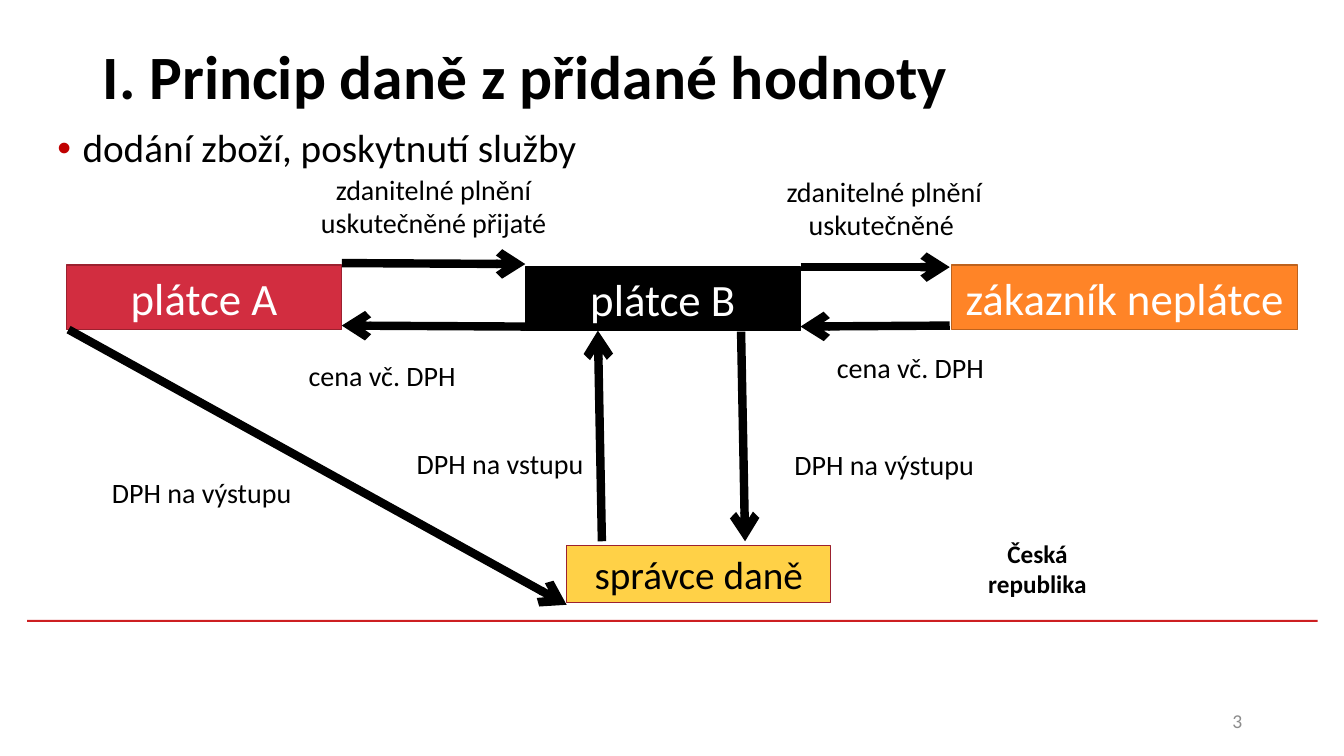
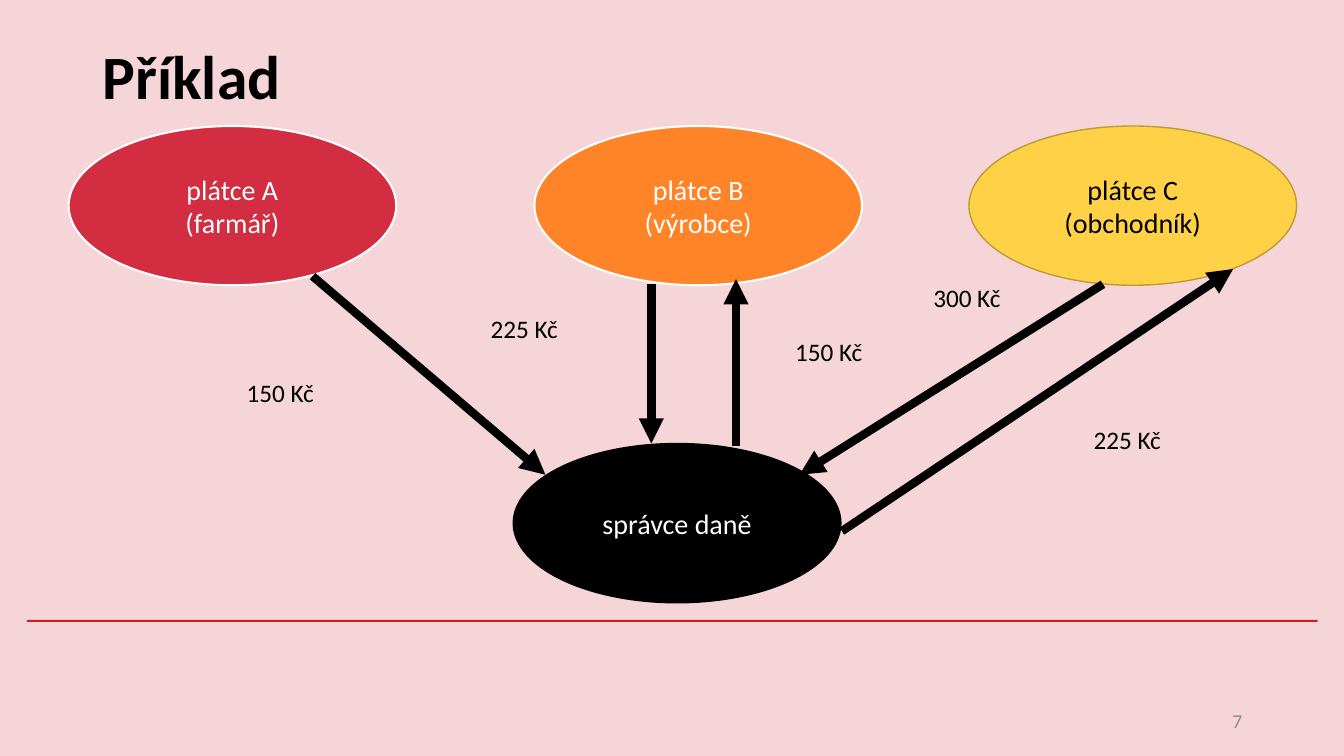
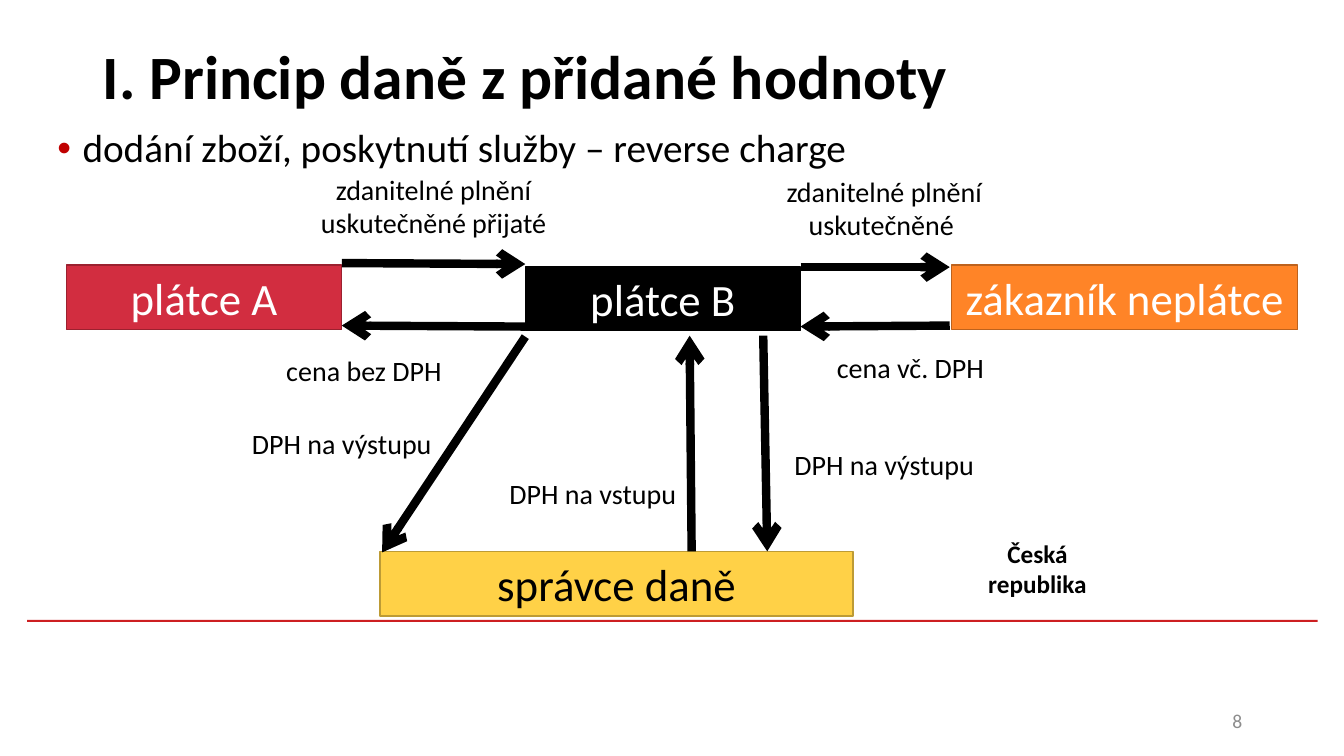
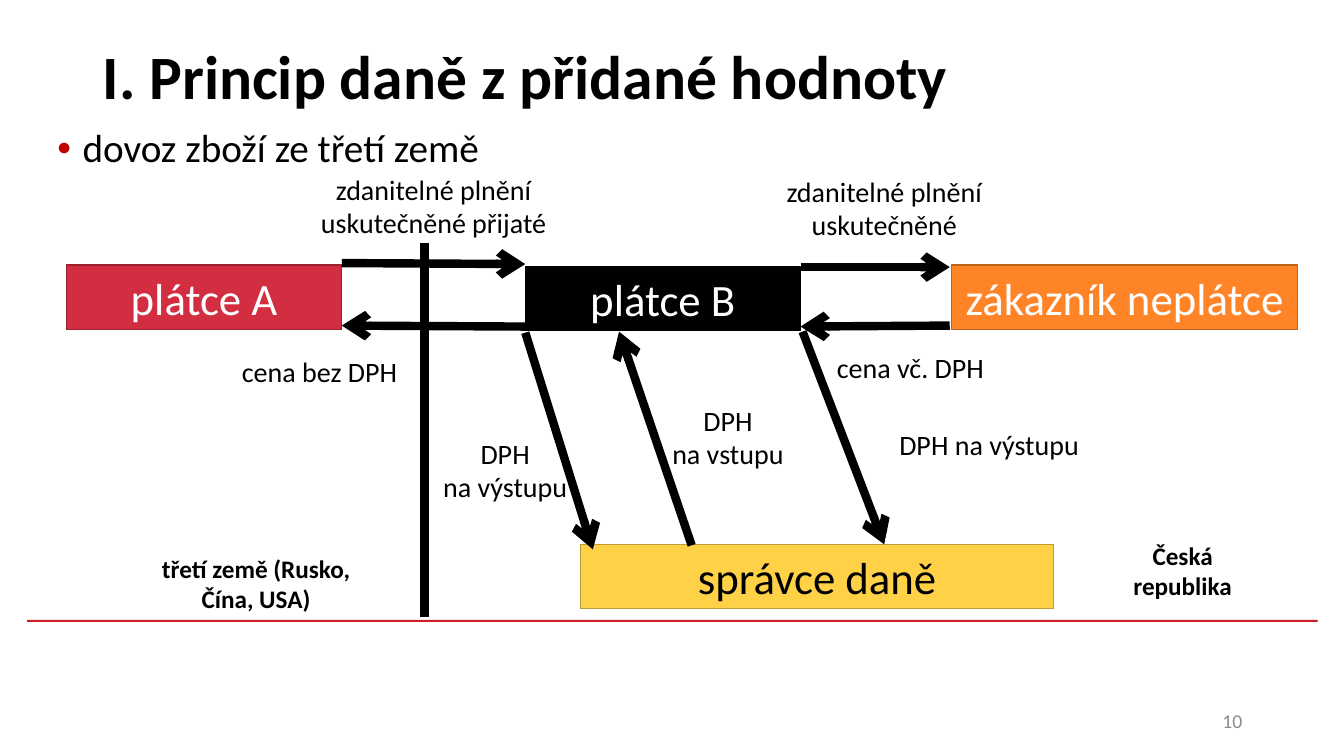
import pptx
import pptx.util
import pptx.dml.color
import pptx.enum.shapes
import pptx.enum.text
import pptx.oxml
import pptx.oxml.ns

Inches, Pt = pptx.util.Inches, pptx.util.Pt
SHAPE = pptx.enum.shapes.MSO_SHAPE
ALIGN = pptx.enum.text.PP_ALIGN
ANCHOR = pptx.enum.text.MSO_ANCHOR

BLACK, WHITE, PINK, GREY = "000000", "FFFFFF", "F6D5D9", "8C8C8C"
RED, ORANGE, YELLOW = "D22D40", "FF8427", "FFD147"
DARK_RED, DARK_ORANGE, DARK_YELLOW = "9B212F", "BD621D", "BD9B35"
RULE_RED, BULLET_RED = "CD1F21", "C00000"


def rgb(value):
    return pptx.dml.color.RGBColor.from_string(value)


def add_xml(parent, tag, **attrs):
    child = pptx.oxml.parse_xml(f"<a:{tag} {pptx.oxml.ns.nsdecls('a')}/>")
    for name, value in attrs.items():
        child.set(name, value)
    parent.append(child)
    return child


class Deck:
    """Shared style and the slide being built."""

    font = "Calibri"

    def __init__(self):
        self.prs = pptx.Presentation()
        self.prs.slide_width, self.prs.slide_height = Inches(13.33), Inches(7.5)
        self.s = None

    def slide(self, title, number, background=WHITE):
        self.s = self.prs.slides.add_slide(self.prs.slide_layouts[6])
        self.s.background.fill.solid()
        self.s.background.fill.fore_color.rgb = rgb(background)
        self.shape(SHAPE.RECTANGLE, (0.27, 6.15, 12.8, 0.02), RULE_RED)
        self.text((0.92, 0.02, 11.5, 1.45), title, 44, bold=True,
                  align=ALIGN.LEFT, anchor=ANCHOR.MIDDLE)
        self.text((9.42, 6.95, 3, 0.4), str(number), 14, GREY,
                  align=ALIGN.RIGHT, anchor=ANCHOR.MIDDLE)

    def set_text(self, sp, text, size, color=BLACK, bold=False,
                 align=ALIGN.CENTER, anchor=ANCHOR.TOP):
        tf = sp.text_frame
        tf.word_wrap, tf.vertical_anchor = True, anchor
        p = tf.paragraphs[0]
        p.text, p.alignment = text, align
        style = {"name": self.font, "size": Pt(size), "bold": bold}
        for r in p.runs:
            for name, value in style.items():
                setattr(r.font, name, value)
            r.font.color.rgb = rgb(color)
        return p

    def text(self, box, text, size=20, color=BLACK, **style):
        sp = self.s.shapes.add_textbox(*map(Inches, box))
        return self.set_text(sp, text, size, color, **style)

    def bullet(self, text):
        p = self.text((0.47, 1.23, 12.39, 0.71), text, 28, align=ALIGN.LEFT)
        pPr = p._p.get_or_add_pPr()
        pPr.set("marL", str(Inches(0.25)))
        pPr.set("indent", str(-Inches(0.25)))
        add_xml(add_xml(pPr, "buClr"), "srgbClr", val=BULLET_RED)
        add_xml(pPr, "buFont", typeface="Arial")
        add_xml(pPr, "buChar", char="•")
        p.line_spacing = 0.9

    def shape(self, kind, box, fill, line=None, width=1):
        sp = self.s.shapes.add_shape(kind, *map(Inches, box))
        sp.shadow.inherit = False
        sp.fill.solid()
        sp.fill.fore_color.rgb = rgb(fill)
        if line:
            sp.line.color.rgb, sp.line.width = rgb(line), Pt(width)
        else:
            sp.line.fill.background()
        return sp

    def box(self, at, text, fill, line, color=WHITE, size=32):
        sp = self.shape(SHAPE.RECTANGLE, at, fill, line)
        self.set_text(sp, text, size, color, anchor=ANCHOR.MIDDLE)

    def ellipse(self, left, top, text, fill, line, width, color=WHITE):
        sp = self.shape(SHAPE.OVAL, (left, top, 3.25, 1.58), fill, line, width)
        self.set_text(sp, text, 20, color, anchor=ANCHOR.MIDDLE)

    def line(self, x1, y1, x2, y2, head="arrow"):
        c = self.s.shapes.add_connector(
            pptx.enum.shapes.MSO_CONNECTOR.STRAIGHT, *map(Inches, (x1, y1, x2, y2)))
        c.line.color.rgb, c.line.width = rgb(BLACK), Pt(6)
        spPr = c._element.spPr
        if head:
            add_xml(spPr.get_or_add_ln(), "tailEnd", type=head)
        add_xml(spPr, "effectLst")

    def label(self, left, top, text, width=2.84):
        self.text((left, top, width, 0.77 if "\n" in text else 0.44), text)

    def place(self, left, top, text, width=1.74):
        self.text((left, top, width, 0.71), text, 18, bold=True)

    def trade(self, number, topic, sale="uskutečněné\t"):
        """Supply chain common to the three principle slides."""
        self.slide("I. Princip daně z přidané hodnoty", number)
        self.bullet(topic)
        self.label(2.46, 1.66, "zdanitelné plnění\vuskutečněné\tpřijaté", 3.68)
        self.label(6.93, 1.68, "zdanitelné plnění\v" + sale, 3.68)
        self.box((5.21, 2.65, 2.73, 0.63), "plátce B", BLACK, BLACK)
        self.box((0.66, 2.63, 2.73, 0.64), "plátce A", RED, DARK_RED)
        self.box((9.44, 2.63, 3.43, 0.64), "zákazník neplátce", ORANGE, DARK_ORANGE)
        for ends in ((3.39, 2.61, 5.21, 2.62), (5.21, 3.24, 3.39, 3.23),
                     (7.94, 2.65, 9.42, 2.65), (9.42, 3.23, 7.94, 3.24)):
            self.line(*ends)
        self.label(7.61, 3.43, "cena vč. DPH")

    def tax_office(self, left, top):
        self.box((left, top, 4.69, 0.64), "správce daně", YELLOW, DARK_YELLOW, BLACK)


def domestic_supply(d):
    d.trade(3, "dodání zboží, poskytnutí služby")
    d.box((5.62, 5.41, 2.62, 0.57), "správce daně", YELLOW, DARK_RED, BLACK, 28)
    for ends in ((7.35, 3.29, 7.39, 5.37), (5.97, 5.37, 5.93, 3.28),
                 (0.68, 3.27, 5.62, 6)):
        d.line(*ends)
    d.label(2.37, 3.51, "cena vč. DPH")
    d.label(3.54, 4.38, "DPH na vstupu")
    d.label(7.35, 4.39, "DPH na výstupu")
    d.label(0.58, 4.67, "DPH na výstupu")
    d.place(9.42, 5.29, "Česká republika")


def example(d):
    d.slide("Příklad", 7, PINK)
    d.ellipse(9.61, 1.25, "plátce C\n(obchodník)", YELLOW, DARK_YELLOW, 1, BLACK)
    d.ellipse(5.09, 4.4, "správce daně", BLACK, BLACK, 1)
    d.ellipse(5.3, 1.25, "plátce B\n(výrobce)", ORANGE, WHITE, 1.5)
    d.ellipse(0.68, 1.25, "plátce A\n(farmář)", RED, WHITE, 1.5)
    # Payments: arrow ends, then place and amount of the label
    for ends, left, top, amount in (
            ((3.1, 2.74, 5.41, 4.71), 1.52, 3.69, 150),
            ((7.3, 4.42, 7.3, 2.77), 6.96, 3.29, 150),
            ((6.46, 2.82, 6.46, 4.4), 3.94, 3.06, 225),
            ((10.94, 2.82, 7.93, 4.71), 8.33, 2.75, 300),
            ((8.35, 5.27, 12.23, 2.67), 9.92, 4.16, 225)):
        d.line(*ends, head="triangle")
        d.text((left, top, 2.52, 0.4), f"{amount} Kč", 18)


def reverse_charge(d):
    d.trade(8, "dodání zboží, poskytnutí služby – reverse charge")
    d.tax_office(3.77, 5.47)
    for ends in ((7.57, 3.33, 7.61, 5.47), (6.86, 5.47, 6.84, 3.33),
                 (5.21, 3.34, 3.79, 5.48)):
        d.line(*ends)
    d.label(2.19, 3.46, "cena bez DPH")
    d.label(4.46, 4.68, "DPH na vstupu")
    d.label(7.35, 4.39, "DPH na výstupu")
    d.label(1.97, 4.18, "DPH na výstupu")
    d.place(9.42, 5.29, "Česká republika")


def import_of_goods(d):
    d.trade(10, "dovoz zboží ze třetí země", "uskutečněné")
    d.tax_office(5.76, 5.4)
    for ends in ((7.96, 3.29, 8.77, 5.4), (6.86, 5.41, 6.14, 3.29),
                 (5.21, 3.3, 5.88, 5.45)):
        d.line(*ends)
    # Border between the two countries
    d.line(4.21, 2.41, 4.21, 6.12, head=None)
    d.label(1.75, 3.47, "cena bez DPH")
    d.label(6.43, 3.95, "DPH\nna vstupu", 1.58)
    d.label(8.39, 4.19, "DPH na výstupu")
    d.label(4.05, 4.28, "DPH\nna výstupu", 1.92)
    d.place(10.86, 5.31, "Česká republika")
    d.place(1.25, 5.44, "třetí země (Rusko, Čína, USA)", 2.58)


def main():
    d = Deck()
    for build in (domestic_supply, example, reverse_charge, import_of_goods):
        build(d)
    d.prs.save("out.pptx")


if __name__ == "__main__":
    main()
